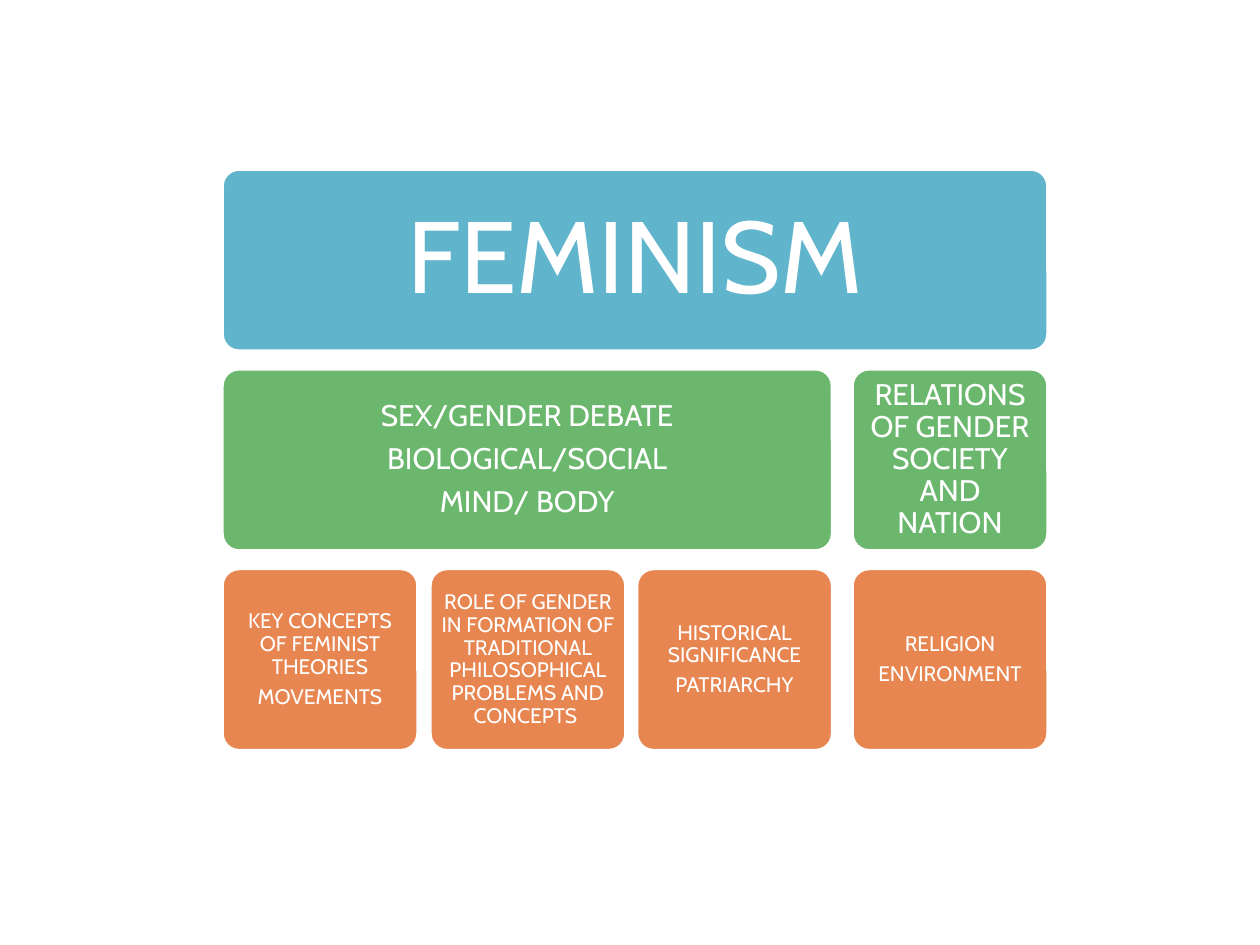
from pptx import Presentation
from pptx.dml.color import RGBColor
from pptx.enum.shapes import MSO_SHAPE
from pptx.enum.text import MSO_ANCHOR, PP_ALIGN
from pptx.util import Inches, Pt

ROUNDED = MSO_SHAPE.ROUNDED_RECTANGLE
MIDDLE = MSO_ANCHOR.MIDDLE
CENTER = PP_ALIGN.CENTER

WHITE = "FFFFFF"
COLUMN_LEFTS = [1.75, 3.4, 5.04, 6.75]
COLUMN_WIDTH = 1.58
FIRST_ROW_TOP = 1.33
ROW_PITCH = 1.585
ROW_HEIGHT = 1.47

LEVELS = [
    ("60B5CC", 58, 0.24, [(0, 3, ["FEMINISM"])]),
    ("6BB76D", 17, 0.07, [
        (0, 2, ["SEX/GENDER DEBATE", "BIOLOGICAL/SOCIAL", "MIND/ BODY"]),
        (3, 3, ["RELATIONS OF GENDER SOCIETY AND NATION"]),
    ]),
    ("E88651", 12, 0.05, [
        (0, 0, ["KEY CONCEPTS OF FEMINIST THEORIES", "MOVEMENTS"]),
        (1, 1, ["ROLE OF GENDER IN FORMATION OF TRADITIONAL "
                "PHILOSOPHICAL PROBLEMS AND CONCEPTS "]),
        (2, 2, ["HISTORICAL SIGNIFICANCE", "PATRIARCHY"]),
        (3, 3, ["RELIGION", "ENVIRONMENT"]),
    ]),
]


def color(hex_value):
    return RGBColor.from_string(hex_value)


class HierarchySlide:
    font_name = "Cabin"
    line_width = 3.78

    def __init__(self, presentation):
        self.slide = presentation.slides.add_slide(presentation.slide_layouts[6])

    def topic(self, left, top, width, height, fill, size, inset, lines):
        card = self.slide.shapes.add_shape(
            ROUNDED, Inches(left), Inches(top), Inches(width), Inches(height))
        card.adjustments[0] = 0.1
        card.shadow.inherit = False
        card.fill.solid()
        card.fill.fore_color.rgb = color(fill)
        card.line.color.rgb = color(WHITE)
        card.line.width = Pt(self.line_width)
        self.label(card.text_frame, size, inset, lines)

    def label(self, frame, size, inset, lines):
        frame.word_wrap = True
        frame.vertical_anchor = MIDDLE
        frame.margin_left = frame.margin_right = Inches(inset)
        frame.margin_top = frame.margin_bottom = Inches(inset)
        frame.text = "\n".join(lines)
        for paragraph in frame.paragraphs:
            paragraph.alignment = CENTER
            paragraph.line_spacing = 0.9
            paragraph.space_after = Pt(size * 0.35)
            paragraph.font.name = self.font_name
            paragraph.font.size = Pt(size)
            paragraph.font.color.rgb = color(WHITE)


def main():
    presentation = Presentation()
    presentation.slide_width = Inches(10)
    presentation.slide_height = Inches(7.5)
    hierarchy = HierarchySlide(presentation)
    for row, (fill, size, inset, topics) in enumerate(LEVELS):
        top = FIRST_ROW_TOP + row * ROW_PITCH
        for first, last, lines in topics:
            left = COLUMN_LEFTS[first]
            width = COLUMN_LEFTS[last] + COLUMN_WIDTH - left
            hierarchy.topic(left, top, width, ROW_HEIGHT, fill, size, inset, lines)
    presentation.save("out.pptx")


if __name__ == "__main__":
    main()
